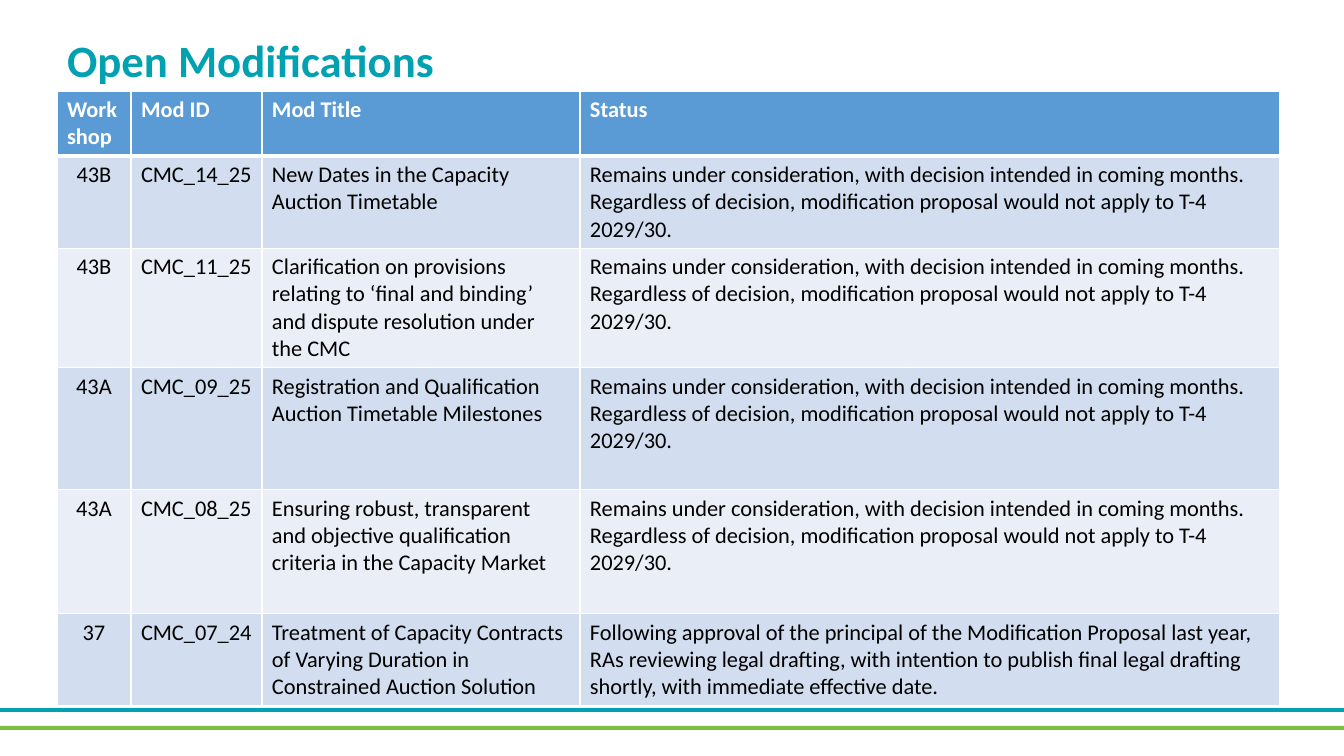
from lxml.etree import SubElement
from pptx import Presentation
from pptx.dml.color import RGBColor
from pptx.enum.text import MSO_ANCHOR, PP_ALIGN
from pptx.enum.shapes import MSO_SHAPE
from pptx.oxml.ns import qn
from pptx.util import Emu, Pt

COLORS = {
    "teal": "00A1B1",
    "green": "7AC142",
    "header": "5B9BD5",
    "odd": "D2DEEF",
    "even": "EAEFF7",
    "white": "FFFFFF",
    "black": "000000",
}
PX_PER_INCH = 100.8
SLIDE_WIDTH, SLIDE_HEIGHT = 1344, 756

HEADINGS = ["Workshop", "Mod ID", "Mod Title", "Status"]
PENDING = (
    "Remains under consideration, with decision intended in coming months. "
    "Regardless of decision, modification proposal would not apply to T-4 2029/30."
)
DRAFTING = (
    "Following approval of the principal of the Modification Proposal last year, "
    "RAs reviewing legal drafting, with intention to publish final legal drafting "
    "shortly, with immediate effective date."
)
MODIFICATIONS = [
    ["43B", "CMC_14_25", "New Dates in the Capacity Auction Timetable", PENDING],
    ["43B", "CMC_11_25", "Clarification on provisions relating to ‘final and binding’ "
     "and dispute resolution under the CMC", PENDING],
    ["43A", "CMC_09_25", "Registration and Qualification Auction Timetable Milestones",
     PENDING],
    ["43A", "CMC_08_25", "Ensuring robust, transparent and objective qualification "
     "criteria in the Capacity Market", PENDING],
    ["37", "CMC_07_24", "Treatment of Capacity Contracts of Varying Duration in "
     "Constrained Auction Solution", DRAFTING],
]
COLUMN_WIDTHS = [74, 131, 318, 700]
ROW_HEIGHTS = [63, 91, 117, 122, 124, 90]


def px(value):
    return Emu(round(value * 914400 / PX_PER_INCH))


def color(name):
    return RGBColor.from_string(COLORS[name])


class SlideBuilder:
    font_name = "Calibri"

    def __init__(self, slide):
        self.slide = slide

    def format_font(self, paragraph, size, color_name, bold):
        font = paragraph.font
        font.name = self.font_name
        font.size = Pt(size)
        font.bold = bold
        font.color.rgb = color(color_name)

    def title(self, text, left, top, width, height):
        shape = self.slide.shapes.title
        shape.left, shape.top = px(left), px(top)
        shape.width, shape.height = px(width), px(height)
        frame = shape.text_frame
        frame.text = text
        frame.word_wrap = True
        frame.vertical_anchor = MSO_ANCHOR.MIDDLE
        paragraph = frame.paragraphs[0]
        paragraph.alignment = PP_ALIGN.LEFT
        self.format_font(paragraph, 32, "teal", True)

    def stripe(self, top, height, color_name, outlined=False):
        shape = self.slide.shapes.add_shape(
            MSO_SHAPE.RECTANGLE, 0, px(top), px(SLIDE_WIDTH), px(height))
        shape.shadow.inherit = False
        shape.fill.solid()
        shape.fill.fore_color.rgb = color(color_name)
        if outlined:
            shape.line.color.rgb = color(color_name)
            shape.line.width = Pt(1)
        else:
            shape.line.fill.background()

    def borders(self, cell, top, bottom):
        properties = cell._tc.get_or_add_tcPr()
        for side, points in (("L", 1), ("R", 1), ("T", top), ("B", bottom)):
            line = SubElement(properties, qn(f"a:ln{side}"), w=str(Pt(points)))
            fill = SubElement(line, qn("a:solidFill"))
            SubElement(fill, qn("a:srgbClr"), val=COLORS["white"])

    def cell(self, cell, text, row, column):
        is_header = row == 0
        self.borders(cell, 3 if row == 1 else 1, 3 if is_header else 1)
        cell.fill.solid()
        cell.fill.fore_color.rgb = color(
            "header" if is_header else "odd" if row % 2 else "even")
        cell.text = text
        paragraph = cell.text_frame.paragraphs[0]
        if column == 0 and not is_header:
            paragraph.alignment = PP_ALIGN.CENTER
        self.format_font(paragraph, 16, "white" if is_header else "black", is_header)

    def table(self, rows, left, top, widths, heights):
        table = self.slide.shapes.add_table(
            len(rows), len(widths), px(left), px(top),
            px(sum(widths)), px(sum(heights))).table
        for column, width in zip(table.columns, widths):
            column.width = px(width)
        for row, height in zip(table.rows, heights):
            row.height = px(height)
        for row_index, texts in enumerate(rows):
            for column_index, text in enumerate(texts):
                self.cell(table.cell(row_index, column_index), text,
                          row_index, column_index)


def main():
    presentation = Presentation()
    presentation.slide_width = px(SLIDE_WIDTH)
    presentation.slide_height = px(SLIDE_HEIGHT)
    builder = SlideBuilder(presentation.slides.add_slide(presentation.slide_layouts[5]))
    builder.stripe(726, 4, "green")
    builder.stripe(709, 2, "teal", outlined=True)
    builder.title("Open Modifications", 57, 27, 993, 65)
    builder.table([HEADINGS] + MODIFICATIONS, 57, 91, COLUMN_WIDTHS, ROW_HEIGHTS)
    presentation.save("out.pptx")


if __name__ == "__main__":
    main()
